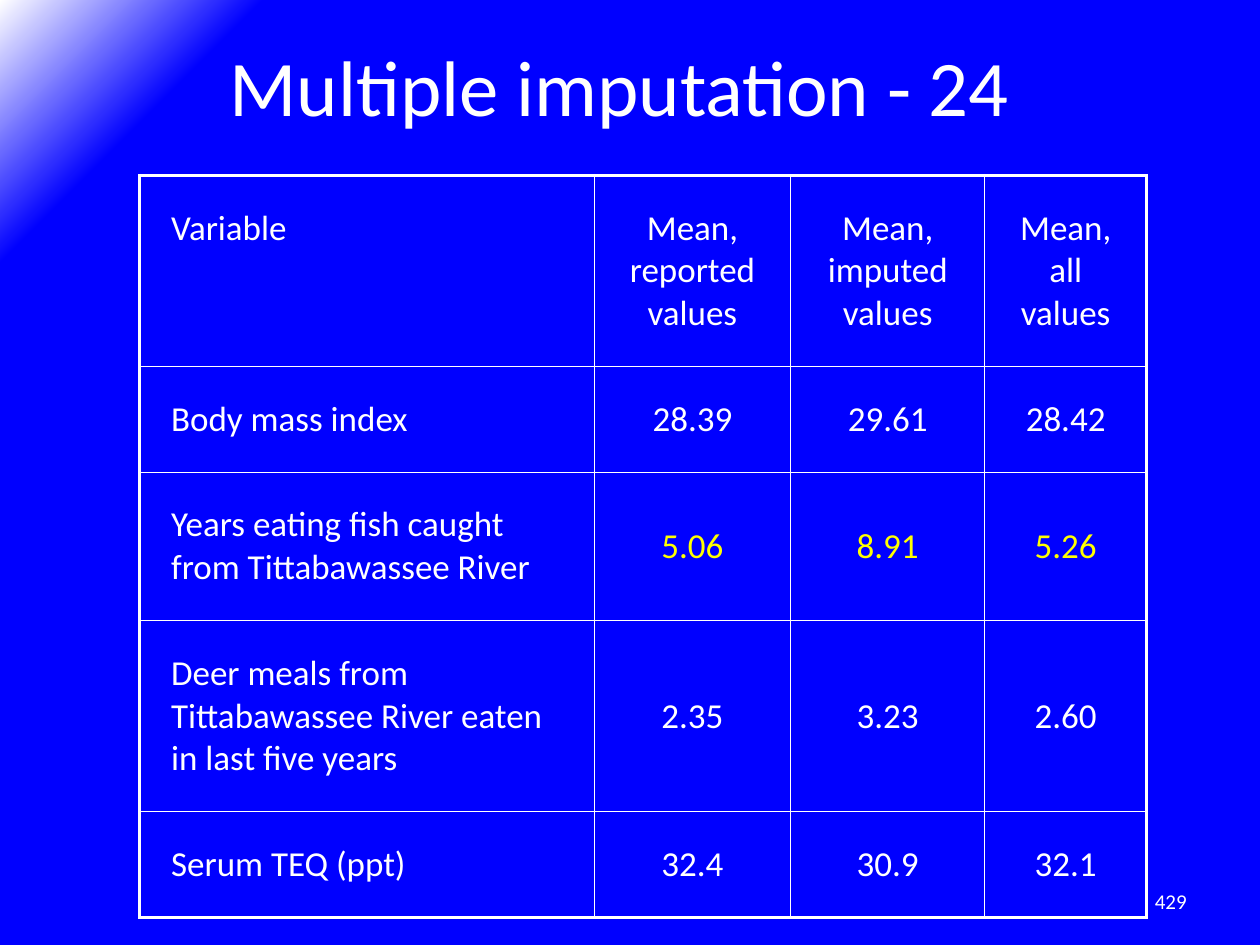
from pptx import Presentation
from pptx.dml.color import RGBColor
from pptx.enum.text import MSO_ANCHOR as Anchor, MSO_AUTO_SIZE as AutoSize, PP_ALIGN as Align
from pptx.oxml import parse_xml
from pptx.oxml.ns import nsdecls
from pptx.util import Inches, Pt

WHITE = RGBColor(0xFF, 0xFF, 0xFF)
YELLOW = RGBColor(0xFF, 0xFF, 0x00)
BLUE = RGBColor(0x00, 0x00, 0xFF)
FONT = "Calibri"

COLUMN_WIDTHS = [4.33, 1.87, 1.85, 1.54]
ROW_HEIGHTS = [1.71, 0.95, 1.33, 1.71, 0.95]
CELL_INSET = Inches(0.3)
OUTER_BORDER, INNER_BORDER = Pt(2.25), Pt(1)
HIGHLIGHTED_ROW = 2
MEANS = [
    ["Variable", "Mean, reported values", "Mean, imputed values", "Mean, all values"],
    ["Body mass index", "28.39", "29.61", "28.42"],
    ["Years eating fish caught from Tittabawassee River", "5.06", "8.91", "5.26"],
    ["Deer meals from Tittabawassee River eaten in last five years", "2.35", "3.23", "2.60"],
    ["Serum TEQ (ppt)", "32.4", "30.9", "32.1"],
]


def write(frame, text, size, color=WHITE, align=Align.LEFT):
    frame.word_wrap = True
    paragraph = frame.paragraphs[0]
    paragraph.alignment = align
    run = paragraph.add_run()
    run.text = text
    font = run.font
    font.name, font.size, font.bold = FONT, Pt(size), False
    font.color.rgb = color


def paint_background(slide):
    """Blue background that brightens to white in the top left corner."""
    stops = "".join(
        f'<a:gs pos="{pos * 1000}"><a:srgbClr val="{color}"/></a:gs>'
        for pos, color in [(0, BLUE), (88, BLUE), (100, WHITE)]
    )
    slide.element.cSld.insert(0, parse_xml(
        f'<p:bg {nsdecls("p", "a")}><p:bgPr><a:gradFill rotWithShape="1">'
        f'<a:gsLst>{stops}</a:gsLst><a:path path="circle">'
        '<a:fillToRect l="100000" t="100000"/></a:path></a:gradFill>'
        '<a:effectLst/></p:bgPr></p:bg>'
    ))


def add_title(slide, left, top, width, height):
    title = slide.shapes.title
    title.left, title.top, title.width, title.height = left, top, width, height
    frame = title.text_frame
    frame.auto_size = AutoSize.NONE
    frame.vertical_anchor = Anchor.TOP
    frame.margin_left = frame.margin_right = Inches(0.12)
    frame.margin_top = frame.margin_bottom = Inches(0.06)
    write(frame, "Multiple imputation - 24", 54, align=Align.CENTER)


def set_borders(cell, row, column):
    outer_sides = {
        "lnL": column == 0,
        "lnR": column == len(COLUMN_WIDTHS) - 1,
        "lnT": row == 0,
        "lnB": row == len(ROW_HEIGHTS) - 1,
    }
    properties = cell._tc.get_or_add_tcPr()
    for position, (side, is_outer) in enumerate(outer_sides.items()):
        width = OUTER_BORDER if is_outer else INNER_BORDER
        properties.insert(position, parse_xml(
            f'<a:{side} {nsdecls("a")} w="{width}"><a:solidFill>'
            f'<a:srgbClr val="{WHITE}"/></a:solidFill></a:{side}>'
        ))


def add_means_table(slide, left, top, width, height):
    table = slide.shapes.add_table(
        len(ROW_HEIGHTS), len(COLUMN_WIDTHS), left, top, width, height).table
    table.first_row = table.horz_banding = False
    for column, column_width in zip(table.columns, COLUMN_WIDTHS):
        column.width = Inches(column_width)
    for row, row_height in zip(table.rows, ROW_HEIGHTS):
        row.height = Inches(row_height)
    for r, values in enumerate(MEANS):
        for c, value in enumerate(values):
            cell = table.cell(r, c)
            cell.fill.background()
            cell.margin_left = cell.margin_right = CELL_INSET
            cell.margin_top = cell.margin_bottom = CELL_INSET
            cell.vertical_anchor = Anchor.MIDDLE if r and c else Anchor.TOP
            write(cell.text_frame, value, 24,
                  color=YELLOW if r == HIGHLIGHTED_ROW and c else WHITE,
                  align=Align.CENTER if c else Align.LEFT)
            set_borders(cell, r, c)


def add_page_number(slide, left, top, width, height):
    frame = slide.shapes.add_textbox(left, top, width, height).text_frame
    frame.vertical_anchor = Anchor.MIDDLE
    write(frame, "429", 14.4, align=Align.RIGHT)


def main():
    deck = Presentation()
    deck.slide_width, deck.slide_height = Inches(12), Inches(9)
    slide = deck.slides.add_slide(deck.slide_layouts[5])
    paint_background(slide)
    add_title(slide, Inches(0.5), Inches(0.3), Inches(10.8), Inches(1.5))
    add_means_table(slide, Inches(1.33), Inches(1.67),
                    Inches(sum(COLUMN_WIDTHS)), Inches(sum(ROW_HEIGHTS)))
    add_page_number(slide, Inches(8.6), Inches(8.34), Inches(2.8), Inches(0.48))
    deck.save("out.pptx")


if __name__ == "__main__":
    main()
